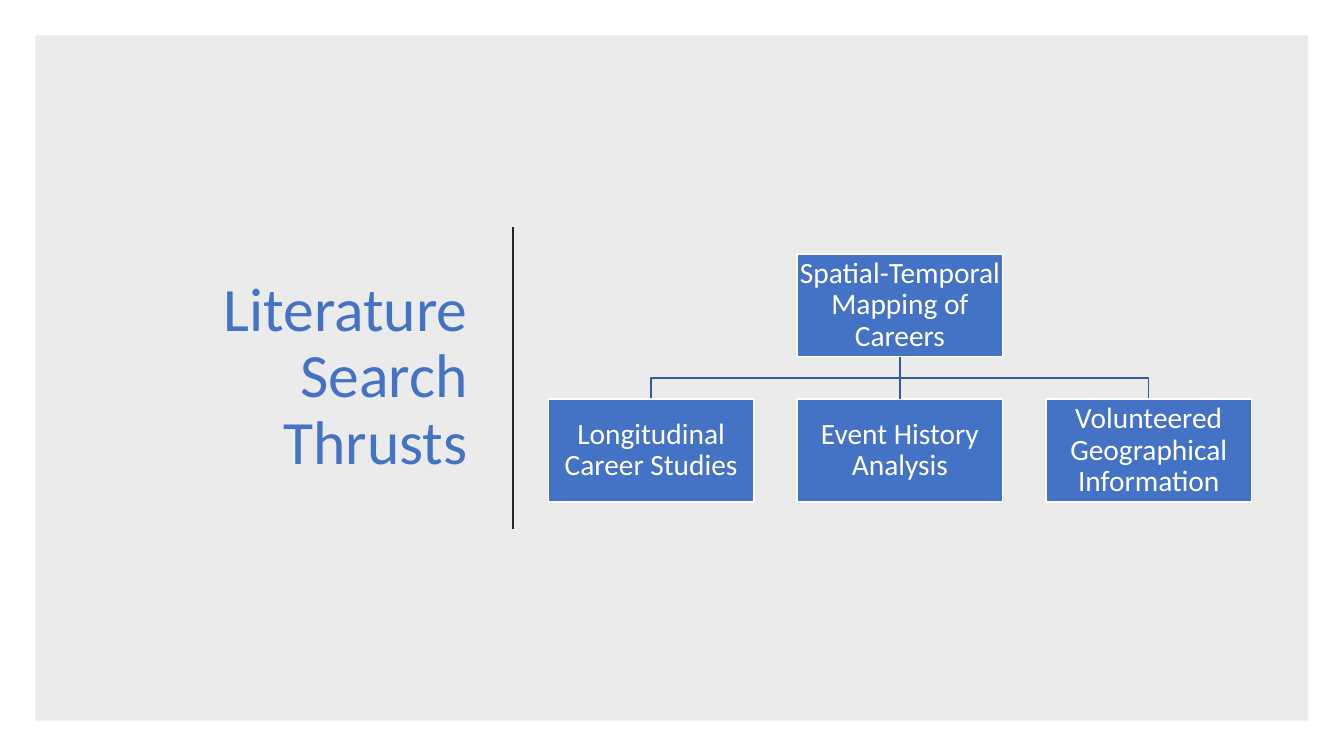
from dataclasses import dataclass

from lxml import etree
from pptx import Presentation
from pptx.dml.color import RGBColor
from pptx.enum.shapes import MSO_CONNECTOR, MSO_SHAPE
from pptx.enum.text import MSO_ANCHOR, PP_ALIGN
from pptx.oxml.ns import qn
from pptx.util import Cm, Pt

COLORS = {
    "panel": "000000",
    "divider": "262626",
    "accent": "4472C4",
    "branch": "365B9D",
    "white": "FFFFFF",
}
FONT = "Calibri"
BOX_WIDTH, BOX_HEIGHT = 5.18, 2.59
COLUMN_LEFT, COLUMN_PITCH = 13.82, 6.27
ROOT_TOP, CHILD_TOP = 6.4, 10.06


@dataclass
class Topic:
    text: str
    column: int
    top: float = CHILD_TOP

    @property
    def left(self) -> float:
        return COLUMN_LEFT + self.column * COLUMN_PITCH

    @property
    def center(self) -> float:
        return self.left + BOX_WIDTH / 2


ROOT = Topic("Spatial-Temporal Mapping of Careers", 1, ROOT_TOP)
CHILDREN = [
    Topic("Longitudinal Career Studies", 0),
    Topic("Event History Analysis", 1),
    Topic("Volunteered Geographical Information", 2),
]


def rgb(name: str) -> RGBColor:
    return RGBColor.from_string(COLORS[name])


def write_text(shape, text: str, *, size: float, color: str, align, inset: float) -> None:
    frame = shape.text_frame
    frame.word_wrap = True
    frame.vertical_anchor = MSO_ANCHOR.MIDDLE
    frame.margin_left = frame.margin_right = Cm(inset)
    frame.margin_top = frame.margin_bottom = Cm(inset)
    paragraph = frame.paragraphs[0]
    paragraph.alignment = align
    paragraph.line_spacing = 0.9
    run = paragraph.add_run()
    run.text = text
    run.font.name = FONT
    run.font.size = Pt(size)
    run.font.color.rgb = rgb(color)


def style_line(shape, color: str, width: float) -> None:
    shape.line.color.rgb = rgb(color)
    shape.line.width = Pt(width)


def add_rectangle(slide, left: float, top: float, width: float, height: float, color: str):
    shape = slide.shapes.add_shape(
        MSO_SHAPE.RECTANGLE, Cm(left), Cm(top), Cm(width), Cm(height))
    shape.shadow.inherit = False
    shape.fill.solid()
    shape.fill.fore_color.rgb = rgb(color)
    return shape


def add_panel(slide) -> None:
    panel = add_rectangle(slide, 0.89, 0.89, 32.08, 17.27, "panel")
    panel.line.fill.background()
    color = panel.fill._xPr.find(".//" + qn("a:srgbClr"))
    etree.SubElement(color, qn("a:alpha"), val="8000")


def add_line(slide, start: tuple, end: tuple, color: str, width: float):
    line = slide.shapes.add_connector(
        MSO_CONNECTOR.STRAIGHT, *(Cm(value) for value in start + end))
    style_line(line, color, width)
    etree.SubElement(line._element.spPr, qn("a:effectLst"))
    return line


def add_elbow(slide, parent: Topic, child: Topic) -> None:
    bottom = parent.top + BOX_HEIGHT
    middle = (bottom + child.top) / 2
    builder = slide.shapes.build_freeform(Cm(parent.center), Cm(bottom))
    corners = [(parent.center, middle), (child.center, middle), (child.center, child.top)]
    builder.add_line_segments([(Cm(x), Cm(y)) for x, y in corners], close=False)
    elbow = builder.convert_to_shape()
    elbow.shadow.inherit = False
    elbow.fill.background()
    style_line(elbow, "branch", 1)


def add_topic(slide, topic: Topic):
    box = add_rectangle(slide, topic.left, topic.top, BOX_WIDTH, BOX_HEIGHT, "accent")
    style_line(box, "white", 1)
    write_text(box, topic.text, size=21, color="white", align=PP_ALIGN.CENTER, inset=0.03)
    return box


def main() -> None:
    presentation = Presentation()
    presentation.slide_width, presentation.slide_height = Cm(33.87), Cm(19.05)
    slide = presentation.slides.add_slide(presentation.slide_layouts[6])

    # Background panel, divider and title
    add_panel(slide)
    add_line(slide, (12.93, 5.72), (12.93, 13.34), "divider", 1.5)
    title = slide.shapes.add_textbox(Cm(2.34), Cm(2.67), Cm(9.7), Cm(13.69))
    write_text(title, "Literature Search Thrusts", size=44, color="accent",
               align=PP_ALIGN.RIGHT, inset=0.25)

    # Outer branches lie behind the boxes
    for child in CHILDREN:
        if child.column != ROOT.column:
            add_elbow(slide, ROOT, child)

    # Topic boxes, with a straight branch to the one below the root
    root_box = add_topic(slide, ROOT)
    for child in CHILDREN:
        child_box = add_topic(slide, child)
        if child.column == ROOT.column:
            branch = add_line(slide, (ROOT.center, ROOT.top + BOX_HEIGHT),
                              (child.center, child.top), "branch", 1)
            branch.begin_connect(root_box, 2)
            branch.end_connect(child_box, 0)

    presentation.save("out.pptx")


if __name__ == "__main__":
    main()
